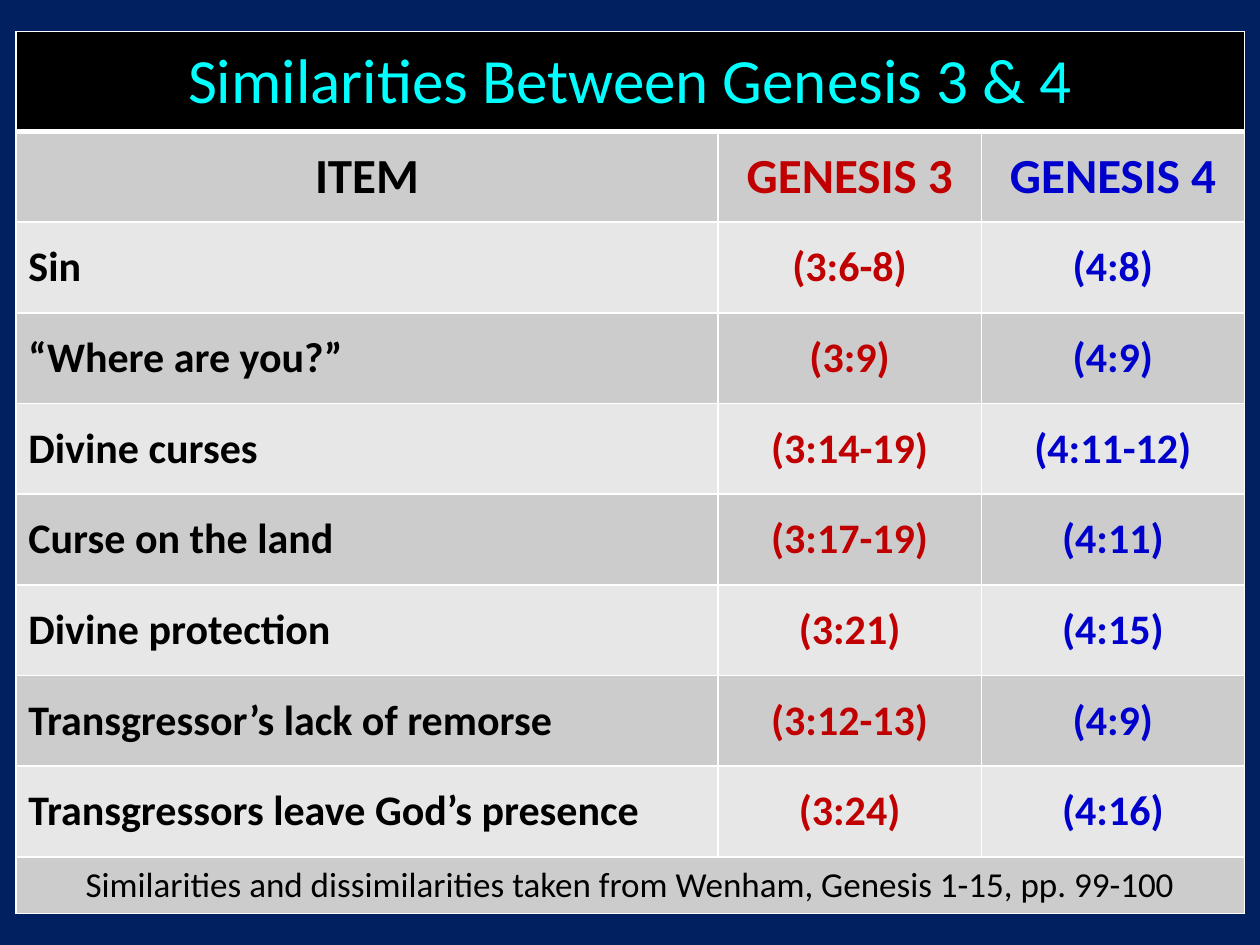
from lxml.etree import SubElement
from pptx import Presentation
from pptx.dml.color import RGBColor
from pptx.enum.text import MSO_ANCHOR, PP_ALIGN
from pptx.oxml.ns import qn
from pptx.util import Cm, Pt

NAVY = RGBColor(0x00, 0x20, 0x60)
BLACK = RGBColor(0x00, 0x00, 0x00)
WHITE = RGBColor(0xFF, 0xFF, 0xFF)
CYAN = RGBColor(0x00, 0xFF, 0xFF)
RED = RGBColor(0xC0, 0x00, 0x00)
BLUE = RGBColor(0x00, 0x00, 0xCC)
DARK_GRAY = RGBColor(0xCC, 0xCC, 0xCC)
LIGHT_GRAY = RGBColor(0xE7, 0xE7, 0xE7)

TITLE = "Similarities Between Genesis 3 & 4"
SOURCE = "Similarities and dissimilarities taken from Wenham, Genesis 1-15, pp. 99-100"
COMPARISON = [
    ("ITEM", "GENESIS 3", "GENESIS 4"),
    ("Sin", "(3:6-8)", "(4:8)"),
    ("“Where are you?”", "(3:9)", "(4:9)"),
    ("Divine curses", "(3:14-19)", "(4:11-12)"),
    ("Curse on the land", "(3:17-19)", "(4:11)"),
    ("Divine protection", "(3:21)", "(4:15)"),
    ("Transgressor’s lack of remorse", "(3:12-13)", "(4:9)"),
    ("Transgressors leave God’s presence", "(3:24)", "(4:16)"),
]
COLUMN_COLORS = (BLACK, RED, BLUE)
COLUMN_SHARES = (4 / 7, 1.5 / 7, 1.5 / 7)
TITLE_HEIGHT = Cm(2.01)
SOURCE_HEIGHT = Cm(1.14)


def set_borders(cell, bottom=Pt(1)):
    properties = cell._tc.get_or_add_tcPr()
    widths = {"lnL": Pt(1), "lnR": Pt(1), "lnT": Pt(1), "lnB": bottom}
    for side, width in widths.items():
        line = SubElement(properties, qn(f"a:{side}"), w=str(width))
        fill = SubElement(line, qn("a:solidFill"))
        SubElement(fill, qn("a:srgbClr"), val=str(WHITE))


def style_cell(cell, fill, bottom=Pt(1)):
    set_borders(cell, bottom)
    cell.fill.solid()
    cell.fill.fore_color.rgb = fill
    cell.vertical_anchor = MSO_ANCHOR.MIDDLE


def write_cell(cell, text, size, color, bold=False, align=PP_ALIGN.CENTER):
    cell.text = text
    para = cell.text_frame.paragraphs[0]
    para.alignment = align
    para.font.name = "Calibri"
    para.font.size = Pt(size)
    para.font.bold = bold
    para.font.color.rgb = color


def add_full_row(table, row, text, size, color, fill, bottom=Pt(1)):
    for cell in table.rows[row].cells:
        style_cell(cell, fill, bottom)
    table.cell(row, 0).merge(table.cell(row, 2))
    write_cell(table.cell(row, 0), text, size, color)


def add_comparison_table(page, left, top, width, height):
    count = len(COMPARISON) + 2
    table = page.shapes.add_table(count, 3, left, top, width, height).table
    for column, share in zip(table.columns, COLUMN_SHARES):
        column.width = int(width * share)
    for row in table.rows:
        row.height = (height - TITLE_HEIGHT - SOURCE_HEIGHT) // len(COMPARISON)
    table.rows[0].height = TITLE_HEIGHT
    table.rows[count - 1].height = SOURCE_HEIGHT

    add_full_row(table, 0, TITLE, 36, CYAN, BLACK, Pt(3))
    for row, texts in enumerate(COMPARISON, 1):
        heading = row == 1
        for column, text in enumerate(texts):
            cell = table.cell(row, column)
            style_cell(cell, DARK_GRAY if row % 2 else LIGHT_GRAY)
            is_item = column == 0 and not heading
            write_cell(cell, text, 28 if heading else 24, COLUMN_COLORS[column],
                       True, PP_ALIGN.LEFT if is_item else PP_ALIGN.CENTER)
    add_full_row(table, count - 1, SOURCE, 20, BLACK, DARK_GRAY)


def main():
    deck = Presentation()
    deck.slide_width, deck.slide_height = Cm(25.4), Cm(19.05)
    page = deck.slides.add_slide(deck.slide_layouts[6])
    page.background.fill.solid()
    page.background.fill.fore_color.rgb = NAVY
    add_comparison_table(page, Cm(0.32), Cm(0.64), Cm(24.77), Cm(17.78))
    deck.save("out.pptx")


if __name__ == "__main__":
    main()
